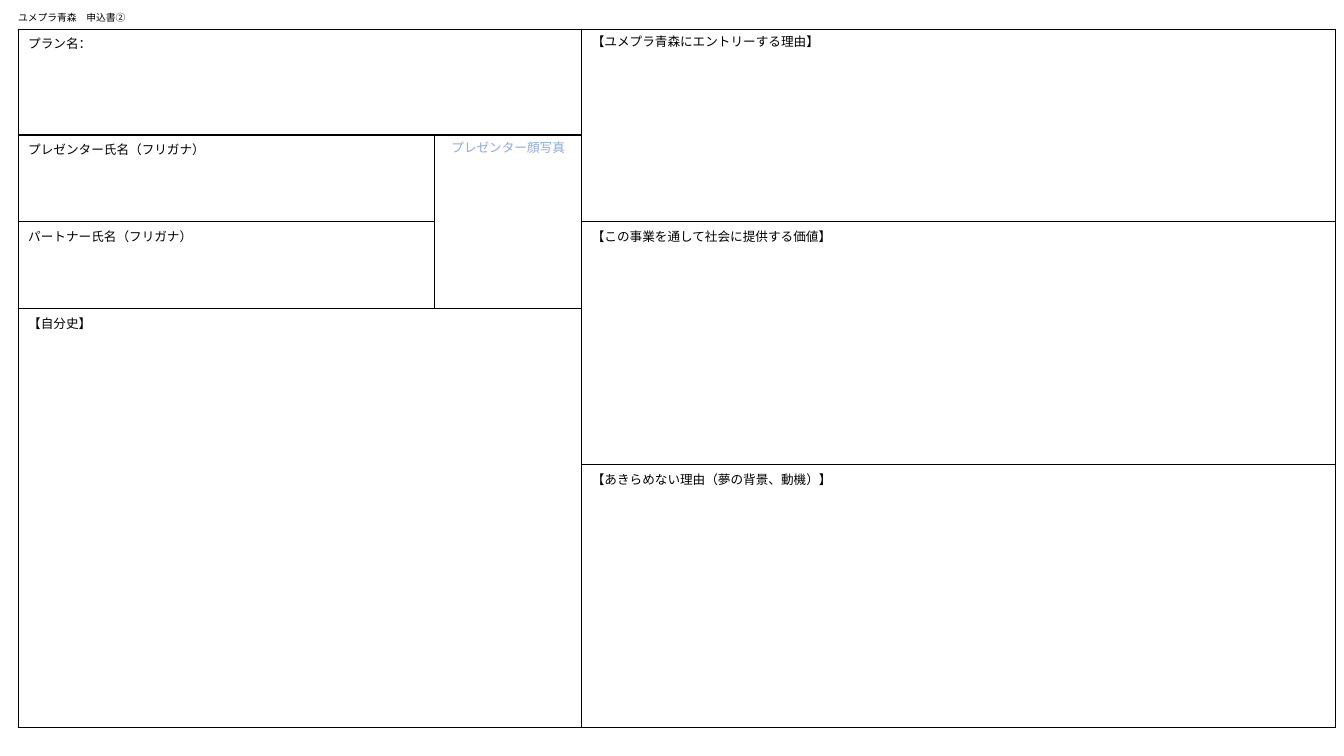
from dataclasses import dataclass

from lxml.etree import SubElement
from pptx import Presentation
from pptx.dml.color import RGBColor
from pptx.enum.text import MSO_ANCHOR, MSO_AUTO_SIZE, PP_ALIGN
from pptx.oxml.ns import qn
from pptx.slide import Slide
from pptx.table import _Cell as Cell
from pptx.text.text import _Paragraph as Paragraph
from pptx.util import Inches, Pt

BLACK = RGBColor(0x00, 0x00, 0x00)
PALE_BLUE = RGBColor(0x8F, 0xAA, 0xDC)
JAPANESE_FONT = "Noto Sans CJK JP"
LATIN_FONT = "Calibri"

SLIDE_WIDTH, SLIDE_HEIGHT = 13.33, 7.5
FORM_LEFT, FORM_TOP = 0.18, 0.29
COLUMN_WIDTHS = (4.13, 1.46, 7.48)
ROW_HEIGHTS = (1.05, 0.86, 0.86, 1.55, 2.61)


@dataclass(frozen=True)
class Field:
    """A labelled box of the form, placed by row and column of the grid."""
    label: str
    row: int
    column: int
    row_span: int = 1
    column_span: int = 1
    font: str = JAPANESE_FONT
    color: RGBColor = BLACK
    alignment: PP_ALIGN = PP_ALIGN.LEFT


FIELDS = (
    Field("プラン名：", 0, 0, column_span=2),
    Field("【ユメプラ青森にエントリーする理由】", 0, 2, row_span=2, font=LATIN_FONT),
    Field("プレゼンター氏名（フリガナ）", 1, 0),
    Field("プレゼンター顔写真", 1, 1, row_span=2, font=LATIN_FONT,
          color=PALE_BLUE, alignment=PP_ALIGN.CENTER),
    Field("パートナー氏名（フリガナ）", 2, 0),
    Field("【この事業を通して社会に提供する価値】", 2, 2, row_span=2),
    Field("【自分史】", 3, 0, row_span=2, column_span=2),
    Field("【あきらめない理由（夢の背景、動機）】", 4, 2),
)


def format_text(paragraph: Paragraph, size: float, font_name: str,
                color: RGBColor, alignment: PP_ALIGN = PP_ALIGN.LEFT) -> None:
    paragraph.alignment = alignment
    for run in paragraph.runs:
        run.font.size = Pt(size)
        run.font.color.rgb = color
        run.font.name = font_name
        SubElement(run.font._element, qn("a:ea"), typeface=font_name)


def outline_cell(cell: Cell) -> None:
    """Give the cell four black borders and no fill."""
    properties = cell._tc.get_or_add_tcPr()
    for side in ("a:lnL", "a:lnR", "a:lnT", "a:lnB"):
        line = SubElement(properties, qn(side), w=str(Pt(1)))
        fill = SubElement(line, qn("a:solidFill"))
        SubElement(fill, qn("a:srgbClr"), val=str(BLACK))
    cell.fill.background()


def add_heading(slide: Slide) -> None:
    title = slide.shapes.title
    title.left, title.top = Inches(0.08), Inches(0.07)
    title.width, title.height = Inches(3.14), Inches(0.22)
    frame = title.text_frame
    frame.text = "ユメプラ青森　申込書②"
    frame.word_wrap = True
    frame.auto_size = MSO_AUTO_SIZE.SHAPE_TO_FIT_TEXT
    frame.vertical_anchor = MSO_ANCHOR.TOP
    format_text(frame.paragraphs[0], 7, JAPANESE_FONT, BLACK)


def add_form(slide: Slide) -> None:
    table = slide.shapes.add_table(
        len(ROW_HEIGHTS), len(COLUMN_WIDTHS), Inches(FORM_LEFT), Inches(FORM_TOP),
        Inches(sum(COLUMN_WIDTHS)), Inches(sum(ROW_HEIGHTS))).table
    table.first_row = table.horz_banding = False
    for column, width in zip(table.columns, COLUMN_WIDTHS):
        column.width = Inches(width)
    for row, height in zip(table.rows, ROW_HEIGHTS):
        row.height = Inches(height)
    for cell in table.iter_cells():
        outline_cell(cell)
    for field in FIELDS:
        cell = table.cell(field.row, field.column)
        if field.row_span * field.column_span > 1:
            cell.merge(table.cell(field.row + field.row_span - 1,
                                  field.column + field.column_span - 1))
        cell.text_frame.text = field.label
        format_text(cell.text_frame.paragraphs[0], 9, field.font,
                    field.color, field.alignment)


def main() -> None:
    presentation = Presentation()
    presentation.slide_width = Inches(SLIDE_WIDTH)
    presentation.slide_height = Inches(SLIDE_HEIGHT)
    title_only = presentation.slide_layouts[5]
    slide = presentation.slides.add_slide(title_only)
    add_heading(slide)
    add_form(slide)
    presentation.save("out.pptx")


if __name__ == "__main__":
    main()
